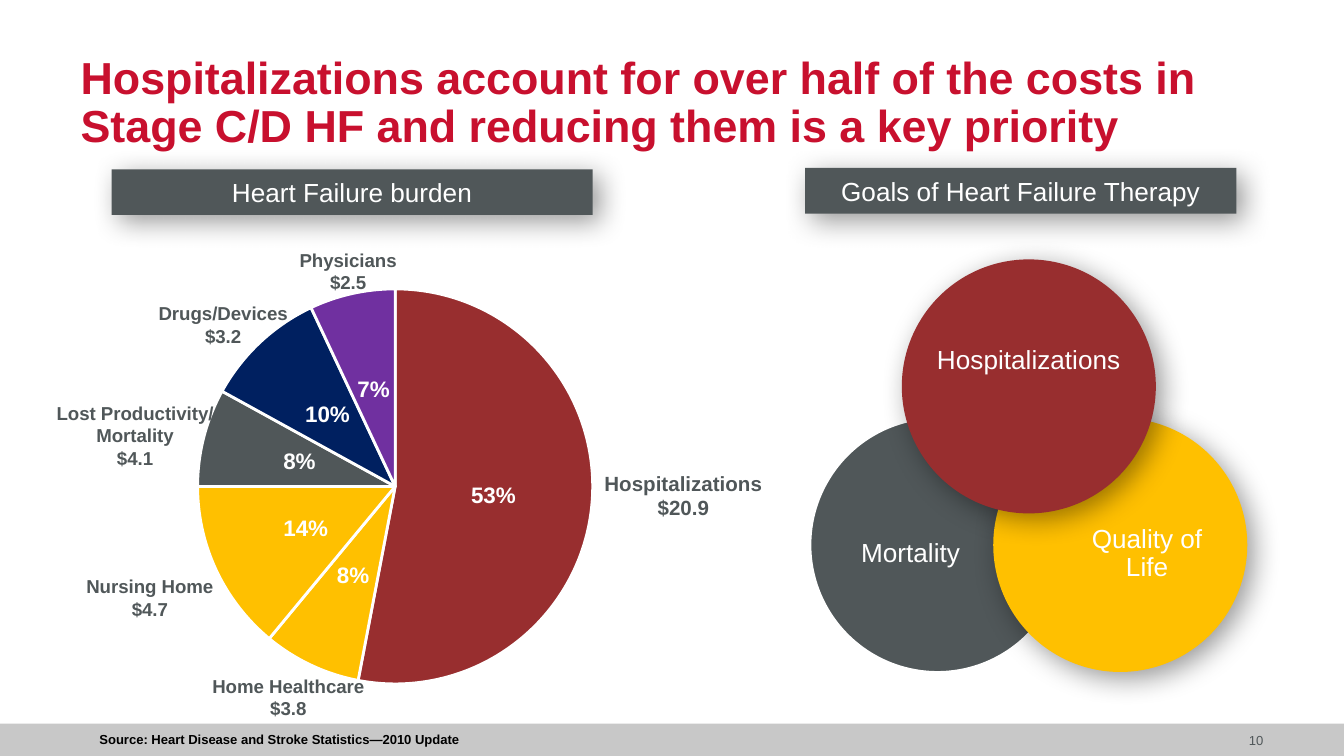
from pptx import Presentation
from pptx.chart.data import CategoryChartData
from pptx.dml.color import RGBColor
from pptx.enum.chart import XL_CHART_TYPE, XL_LABEL_POSITION
from pptx.enum.shapes import MSO_SHAPE
from pptx.enum.text import MSO_ANCHOR, PP_ALIGN
from pptx.oxml import parse_xml
from pptx.oxml.ns import nsdecls
from pptx.util import Inches, Pt

RED = RGBColor(0xC8, 0x10, 0x2E)
BRICK = RGBColor(0x98, 0x2E, 0x2F)
GOLD = RGBColor(0xFF, 0xC0, 0x00)
SLATE = RGBColor(0x50, 0x57, 0x59)
NAVY = RGBColor(0x00, 0x20, 0x60)
PURPLE = RGBColor(0x70, 0x30, 0xA0)
SILVER = RGBColor(0xC8, 0xC8, 0xC8)
WHITE = RGBColor(0xFF, 0xFF, 0xFF)
BLACK = RGBColor(0x00, 0x00, 0x00)

prs = Presentation()
prs.slide_width, prs.slide_height = Inches(10), Inches(10) * 9 // 16
COL, ROW = prs.slide_width / 100, prs.slide_height / 56.25
s = prs.slides.add_slide(prs.slide_layouts[6])


def add_block(kind, box, fill=None, shadow=False):
    x, y, w, h = box
    place = [int(v) for v in (x * COL, y * ROW, w * COL, h * ROW)]
    if kind is None:
        return s.shapes.add_textbox(*place)
    sp = s.shapes.add_shape(kind, *place)
    sp.shadow.inherit = False
    sp.fill.solid()
    sp.fill.fore_color.rgb = fill
    sp.line.fill.background()
    if shadow:
        effects = sp._element.spPr.find("{http://schemas.openxmlformats.org/drawingml/2006/main}effectLst")
        effects.append(parse_xml(
            f'<a:outerShdw {nsdecls("a")} blurRad="{Pt(15)}" dist="{Pt(5)}" dir="2700000" '
            'algn="tl" rotWithShape="0"><a:srgbClr val="000000"><a:alpha val="40000"/>'
            '</a:srgbClr></a:outerShdw>'))
    return sp


def write(sp, text, size, color, bold=False, align=PP_ALIGN.CENTER, spacing=1.0,
          insets=(0, 0, 0, 0), wrap=True, anchor=MSO_ANCHOR.MIDDLE):
    tf = sp.text_frame
    left, top, right, bottom = [int(v * COL) for v in insets]
    frame = {"margin_left": left, "margin_top": top, "margin_right": right,
             "margin_bottom": bottom, "word_wrap": wrap, "vertical_anchor": anchor}
    for name, value in frame.items():
        setattr(tf, name, value)
    p = tf.paragraphs[0]
    p.text = text
    p.alignment, p.line_spacing = align, spacing
    for r in p.runs:
        for name, value in {"name": "Arial", "size": Pt(size), "bold": bold}.items():
            setattr(r.font, name, value)
        r.font.color.rgb = color


add_block(MSO_SHAPE.RECTANGLE, (0, 53.85, 100, 2.4), SILVER)

data = CategoryChartData()
data.categories = ["1", "2", "3", "4", "5", "6"]
data.add_series("Series 1", (53, 8, 14, 8, 10, 7))
chart = s.shapes.add_chart(XL_CHART_TYPE.PIE, int(10 * COL), int(20.2 * ROW),
                           int(39.2 * COL), int(32 * ROW), data).chart
chart.has_legend = chart.has_title = False
chart.font.name, chart.font.size = "Arial", Pt(10)
chart.font.color.rgb = WHITE
plot = chart.plots[0]
plot.vary_by_categories = True
for i, color in enumerate((BRICK, GOLD, GOLD, SLATE, NAVY, PURPLE)):
    fmt = plot.series[0].points[i].format
    fmt.fill.solid()
    fmt.fill.fore_color.rgb = color
    fmt.line.color.rgb = WHITE
    fmt.line.width = Pt(1.5)
labels = plot.series[0].data_labels
for name, value in {"show_percentage": True, "show_value": False, "number_format": "0%",
                    "number_format_is_linked": False,
                    "position": XL_LABEL_POSITION.CENTER}.items():
    setattr(labels, name, value)
for name, value in {"name": "Arial", "size": Pt(12), "bold": True}.items():
    setattr(labels.font, name, value)
labels.font.color.rgb = WHITE
area = chart._chartSpace.chart.plotArea
for old in area.findall("{http://schemas.openxmlformats.org/drawingml/2006/chart}layout"):
    area.remove(old)
area.insert(0, parse_xml(
    f'<c:layout {nsdecls("c")}><c:manualLayout><c:layoutTarget val="inner"/>'
    '<c:xMode val="edge"/><c:yMode val="edge"/><c:x val="0.12"/><c:y val="0.04"/>'
    '<c:w val="0.75"/><c:h val="0.92"/></c:manualLayout></c:layout>'))

write(add_block(None, (6, 4, 88, 7.5)),
      "Hospitalizations account for over half of the costs in Stage C/D HF "
      "and reducing them is a key priority",
      24, RED, True, PP_ALIGN.LEFT, 0.9)
write(add_block(None, (90, 53.85, 4, 2.4)), "10", 7, SLATE, align=PP_ALIGN.RIGHT)

TEXT_INSETS = (0.7, 0.4, 0.7, 0.4)
for text, box, size in (
    ("Hospitalizations\n$20.9", (44.2, 34.6, 13.3, 4.5), 11),
    ("Lost Productivity/\nMortality\n$4.1", (3.4, 29.5, 13.3, 5.8), 10),
    ("Home Healthcare\n$3.8", (15, 49.8, 12.9, 4.1), 10),
    ("Drugs/Devices\n$3.2", (11, 22.1, 11.2, 4.1), 10),
    ("Physicians\n$2.5", (21.5, 18.1, 8.8, 4.1), 10),
    ("Nursing Home\n$4.7", (5.6, 42.4, 11.1, 4.1), 10),
):
    write(add_block(None, box), text, size, SLATE, True, insets=TEXT_INSETS, wrap=False)

write(add_block(None, (6.7, 54.1, 28.8, 1.9)),
      "Source: Heart Disease and Stroke Statistics—2010 Update",
      7, BLACK, True, PP_ALIGN.LEFT, insets=TEXT_INSETS, anchor=MSO_ANCHOR.BOTTOM)

for text, box in (("Heart Failure burden", (8.3, 12.6, 35.8, 3.4)),
                  ("Goals of Heart Failure Therapy", (59.9, 12.5, 32.1, 3.4))):
    write(add_block(MSO_SHAPE.RECTANGLE, box, SLATE, True), text, 14, WHITE)

DIAMETER = 18.9
for text, x, y, color, shadow, insets, wrap in (
    ("Mortality", 60.3, 31.1, SLATE, False, (0, 1.3, 4, 0), False),
    ("Quality of Life", 73.9, 31.1, GOLD, True, (4, 1.3, 0, 0), True),
    ("Hospitalizations", 67.1, 19.3, BRICK, True, (0, 0, 0, 3.8), False),
):
    sp = add_block(MSO_SHAPE.OVAL, (x, y, DIAMETER, DIAMETER), color, shadow)
    if not shadow:
        sp.line.color.rgb = WHITE
        sp.line.width = Pt(1)
    write(sp, text, 14, WHITE, spacing=0.9, insets=insets, wrap=wrap)

prs.save("out.pptx")
